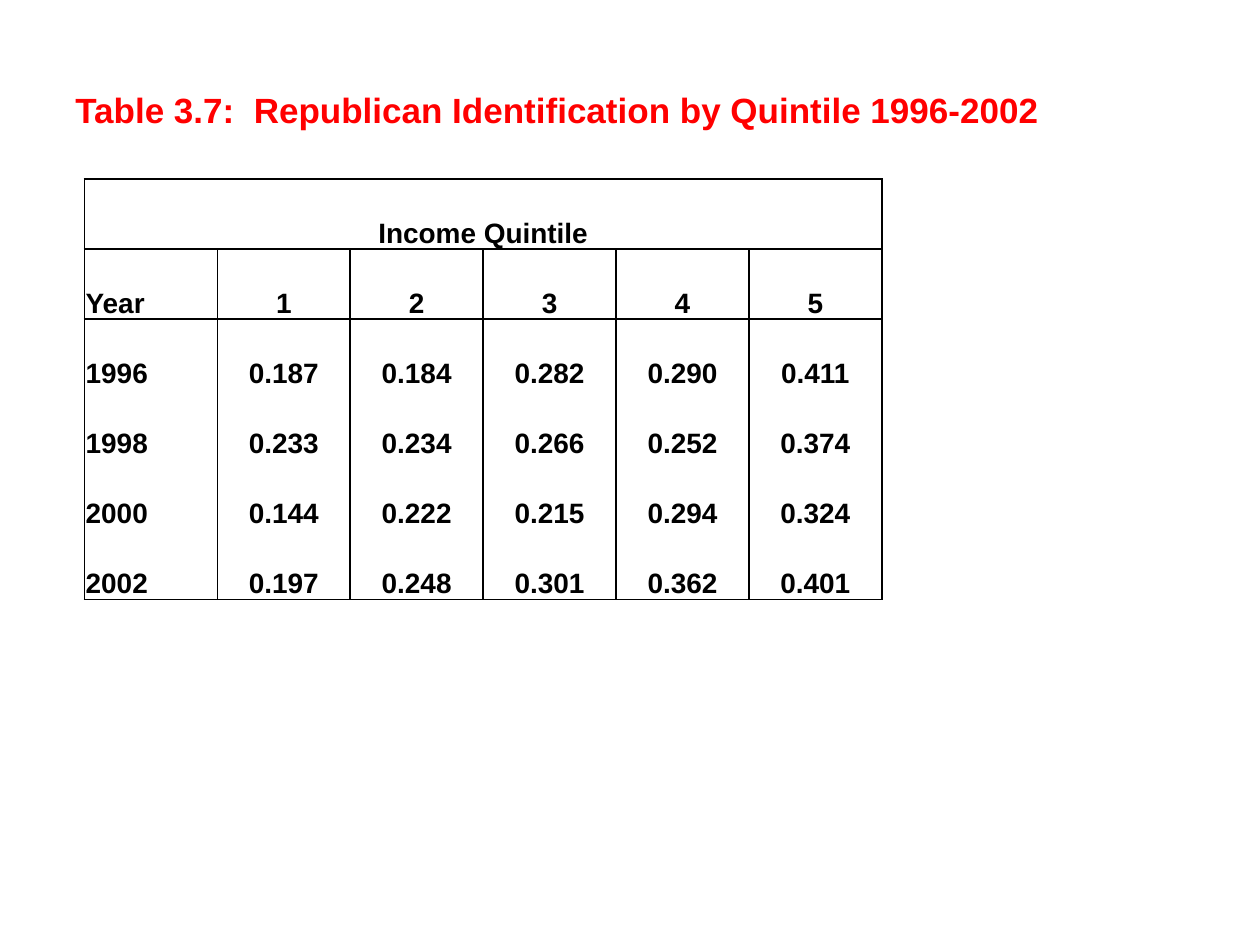
"""Build the slide with the table of Republican identification by income quintile."""
from lxml.etree import SubElement
from pptx import Presentation
from pptx.dml.color import RGBColor
from pptx.enum.text import MSO_ANCHOR as Anchor, PP_ALIGN as Align
from pptx.oxml import parse_xml
from pptx.oxml.ns import nsdecls, qn
from pptx.util import Inches, Pt


def color(hex_string):
    return RGBColor.from_string(hex_string)


def write_text(frame, text, size=16, fill="000000", align=Align.LEFT, indent=0):
    paragraph = frame.paragraphs[0]
    paragraph.alignment = align
    properties = paragraph._p.get_or_add_pPr()
    properties.set("marL", "0")
    properties.set("indent", str(Inches(indent)))
    run = paragraph.add_run()
    run.text = text
    run.font.name = "Arial"
    run.font.size = Pt(size)
    run.font.bold = True
    run.font.color.rgb = color(fill)


ROWS = [
    ["Income Quintile", "", "", "", "", ""],
    ["Year", "1", "2", "3", "4", "5"],
    ["1996", "0.187", "0.184", "0.282", "0.290", "0.411"],
    ["1998", "0.233", "0.234", "0.266", "0.252", "0.374"],
    ["2000", "0.144", "0.222", "0.215", "0.294", "0.324"],
    ["2002", "0.197", "0.248", "0.301", "0.362", "0.401"],
]
ROW_COUNT, COLUMN_COUNT = len(ROWS), len(ROWS[0])
TABLE_WIDTH, TABLE_HEIGHT = Inches(6.33), Inches(3.34)
RULED_EDGES = {0, 1, 2, ROW_COUNT}

presentation = Presentation()
presentation.slide_width, presentation.slide_height = Inches(10), Inches(7.5)
slide = presentation.slides.add_slide(presentation.slide_layouts[6])

title = slide.shapes.add_textbox(0, Inches(0.63), Inches(8.75), Inches(0.74))
title.text_frame.word_wrap = True
title.text_frame.vertical_anchor = Anchor.TOP
title.text_frame.margin_top = Inches(0.07)
write_text(title.text_frame, "Table 3.7:  Republican Identification by Quintile 1996-2002",
           size=20, fill="FF0000", indent=0.5)

table = slide.shapes.add_table(ROW_COUNT, COLUMN_COUNT, Inches(0.67), Inches(1.42),
                               TABLE_WIDTH, TABLE_HEIGHT).table
table.first_row = table.horz_banding = False
for column in table.columns:
    column.width = TABLE_WIDTH // COLUMN_COUNT
for row in table.rows:
    row.height = TABLE_HEIGHT // ROW_COUNT
table.cell(0, 0).merge(table.cell(0, COLUMN_COUNT - 1))

for row_index, values in enumerate(ROWS):
    for column_index, value in enumerate(values):
        cell = table.cell(row_index, column_index)
        cell.margin_left = cell.margin_right = cell.margin_top = Inches(0.01)
        cell.margin_bottom = 0
        cell.vertical_anchor = Anchor.BOTTOM
        cell.fill.background()
        if value:
            left_aligned = column_index == 0 and row_index > 0
            write_text(cell.text_frame, value, align=Align.LEFT if left_aligned else Align.CENTER)
        borders = {"lnL": True, "lnR": True,
                   "lnT": row_index in RULED_EDGES, "lnB": row_index + 1 in RULED_EDGES}
        for position, (tag, ruled) in enumerate(borders.items()):
            line = parse_xml(f'<a:{tag} {nsdecls("a")} w="{Pt(1)}"/>')
            paint = SubElement(line, qn("a:solidFill" if ruled else "a:noFill"))
            if ruled:
                SubElement(paint, qn("a:srgbClr"), val="000000")
            cell._tc.get_or_add_tcPr().insert(position, line)

presentation.save("out.pptx")
